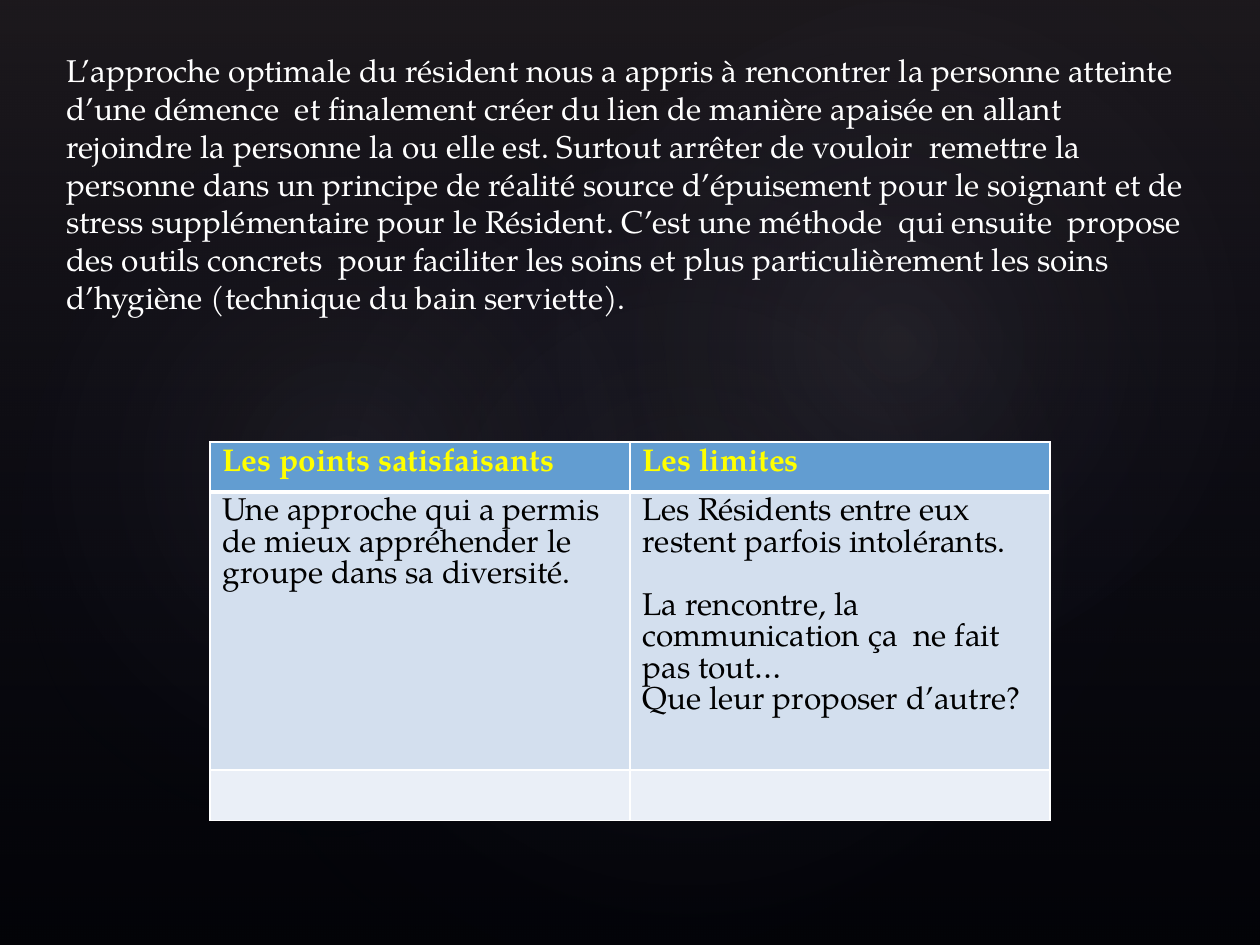
from lxml import etree
from pptx import Presentation
from pptx import util as u
from pptx.dml import color
from pptx.enum import shapes, text
from pptx.oxml import ns, parse_xml

SCALE = 914400 / 126
FONT = "TeX Gyre Pagella"
INTRO = (
    "L’approche optimale du résident nous a appris à rencontrer la personne "
    "atteinte d’une démence  et finalement créer du lien de manière apaisée en "
    "allant rejoindre la personne la ou elle est. Surtout arrêter de vouloir  "
    "remettre la personne dans un principe de réalité source d’épuisement pour le "
    "soignant et de stress supplémentaire pour le Résident. C’est une méthode  qui "
    "ensuite  propose des outils concrets  pour faciliter les soins et plus "
    "particulièrement les soins d’hygiène (technique du bain serviette)."
)
HEADINGS = ["Les points satisfaisants", "Les limites"]
OPINIONS = [
    ["Une approche qui a permis de mieux appréhender le groupe dans sa diversité."],
    [
        "Les Résidents entre eux restent parfois intolérants.",
        "La rencontre, la communication ça  ne fait pas tout…",
        "Que leur proposer d’autre?",
    ],
]
ROW_HEIGHTS = [50, 278, 50]
ROW_FILLS = ["629DD1", "D3DFEE", "EAEFF7"]
GLOWS = [
    ((189, 144, 998, 786), 328.7, 7),
    ((-38, 161, 764, 617), 294.3, 8),
    ((451, 16, 893, 655), 328.7, 8),
]


def px(length):
    return u.Emu(round(length * SCALE))


def rgb(value):
    return color.RGBColor.from_string(value)


def write(frame, content, size=18, fill="000000", bold=False, leading=18, before=0):
    frame.word_wrap = True
    paragraph = frame.paragraphs[0]
    if paragraph.runs:
        paragraph = frame.add_paragraph()
    paragraph.line_spacing = u.Pt(leading)
    paragraph.space_before = u.Pt(before)
    run = paragraph.add_run()
    run.text = content
    run.font.name = FONT
    run.font.size = u.Pt(size)
    run.font.bold = bold
    run.font.color.rgb = rgb(fill)


def add_veil(slide, preset, box, stops, direction, rotation=0):
    shape = slide.shapes.add_shape(preset, *map(px, box))
    shape.rotation = rotation
    shape.shadow.inherit = False
    shape.line.fill.background()
    stop_xml = "".join(
        f'<a:gs pos="{position * 1000}"><a:srgbClr val="{value}">'
        f'<a:alpha val="{opacity * 1000}"/></a:srgbClr></a:gs>'
        for position, value, opacity in stops
    )
    gradient = parse_xml(
        f'<a:gradFill {ns.nsdecls("a")} rotWithShape="1">'
        f"<a:gsLst>{stop_xml}</a:gsLst>{direction}</a:gradFill>"
    )
    shape.element.spPr.find(ns.qn("a:prstGeom")).addnext(gradient)


def add_backdrop(slide, box):
    left, top, width, height = box
    slide.background.fill.solid()
    slide.background.fill.fore_color.rgb = rgb("000000")
    add_veil(
        slide, shapes.MSO_SHAPE.RECTANGLE, box,
        [(0, "504652", 36), (100, "242852", 10)],
        '<a:lin ang="5400000" scaled="0"/>',
    )
    for (x, y, glow_width, glow_height), rotation, opacity in GLOWS:
        add_veil(
            slide, shapes.MSO_SHAPE.OVAL,
            (left + x, top + y, glow_width, glow_height),
            [(0, "C4BCC6", opacity), (58, "242852", 0), (100, "242852", 0)],
            '<a:path path="circle"><a:fillToRect l="50000" t="50000" '
            'r="50000" b="50000"/></a:path>',
            rotation,
        )


def add_intro(slide, box):
    frame = slide.shapes.add_textbox(*map(px, box)).text_frame
    write(frame, INTRO, fill="FFFFFF", leading=21.6)


def style_cell(cell, fill, top, bottom):
    properties = cell._tc.get_or_add_tcPr()
    for side, points in zip("LRTB", (1, 1, top, bottom)):
        line = etree.SubElement(properties, ns.qn(f"a:ln{side}"), w=str(u.Pt(points)))
        solid = etree.SubElement(line, ns.qn("a:solidFill"))
        etree.SubElement(solid, ns.qn("a:srgbClr"), val="FFFFFF")
    cell.fill.solid()
    cell.fill.fore_color.rgb = rgb(fill)


def add_opinion_table(slide, box):
    frame = slide.shapes.add_table(len(ROW_HEIGHTS), len(HEADINGS), *map(px, box))
    table = frame.table
    for column in table.columns:
        column.width = px(box[2] // len(HEADINGS))
    for index, (height, fill) in enumerate(zip(ROW_HEIGHTS, ROW_FILLS)):
        table.rows[index].height = px(height)
        for cell in table.rows[index].cells:
            style_cell(cell, fill, 3 if index == 1 else 1, 3 if index == 0 else 1)
    for column, (heading, opinions) in enumerate(zip(HEADINGS, OPINIONS)):
        write(table.cell(0, column).text_frame, heading, fill="FFFF00", bold=True)
        for index, opinion in enumerate(opinions):
            write(table.cell(1, column).text_frame, opinion,
                  before=18 if index == 1 else 0)


def main():
    presentation = Presentation()
    presentation.slide_width, presentation.slide_height = px(1260), px(945)
    slide = presentation.slides.add_slide(presentation.slide_layouts[6])
    add_backdrop(slide, (0, 0, 1260, 945))
    add_intro(slide, (54, 45, 1150, 585))
    add_opinion_table(slide, (210, 442, 840, sum(ROW_HEIGHTS)))
    presentation.save("out.pptx")


if __name__ == "__main__":
    main()
